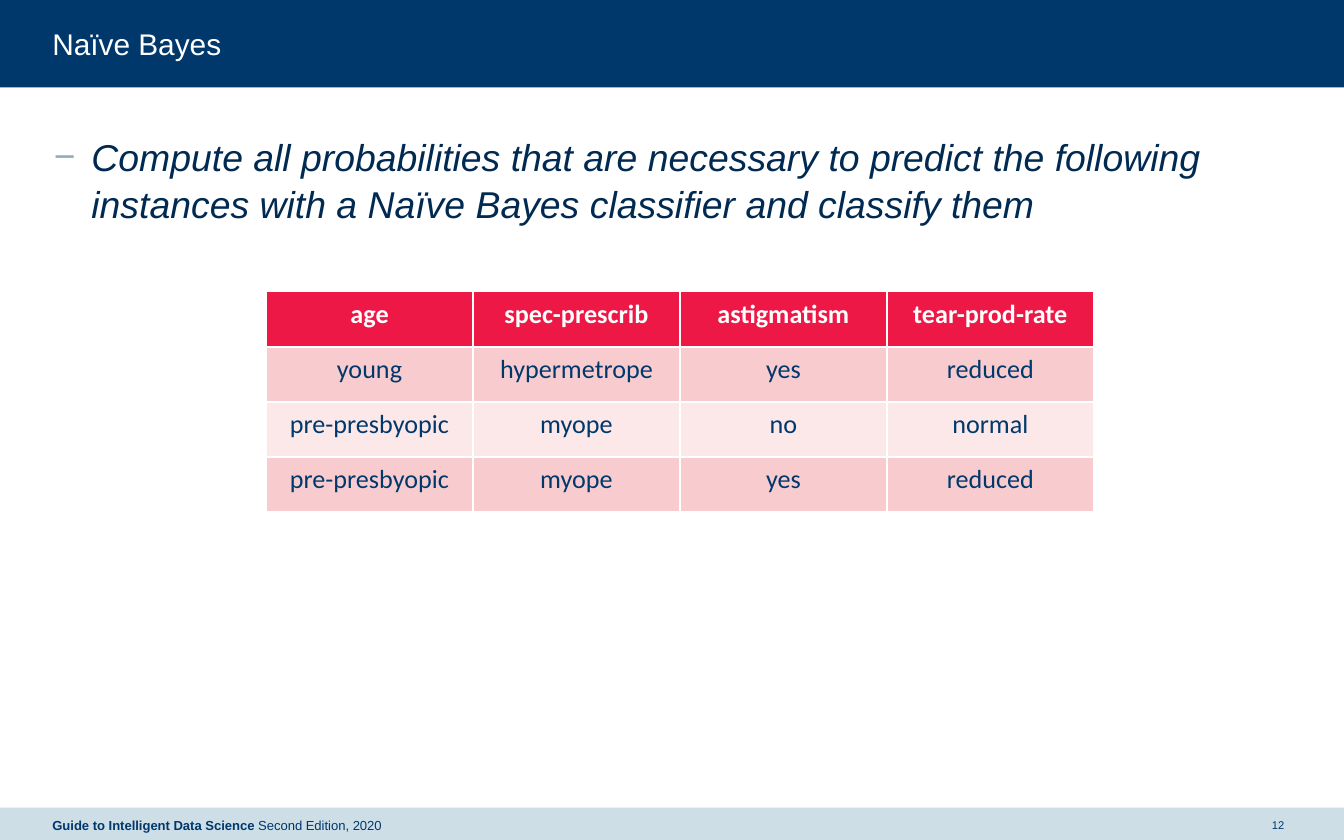
from lxml.etree import SubElement
from pptx import Presentation
from pptx.dml.color import RGBColor
from pptx.enum.shapes import MSO_SHAPE
from pptx.enum.text import MSO_ANCHOR, PP_ALIGN
from pptx.oxml.ns import qn
from pptx.util import Inches, Pt

NAVY = RGBColor(0x00, 0x38, 0x6C)
DARK = RGBColor(0x00, 0x2A, 0x51)
PALE_BLUE = RGBColor(0xCD, 0xDE, 0xE7)
WHITE = RGBColor(0xFF, 0xFF, 0xFF)
RED = RGBColor(0xED, 0x18, 0x46)
PINK = RGBColor(0xF8, 0xCC, 0xCF)
LIGHT_PINK = RGBColor(0xFC, 0xE8, 0xE9)
BULLET_COLOR = "92AEBC"

TITLE = "Naïve Bayes"
TASK = ("Compute all probabilities that are necessary to predict the following "
        "instances with a Naïve Bayes classifier and classify them")
BOOK, EDITION = "Guide to Intelligent Data Science ", "Second Edition, 2020"
PAGE = "12"
INSTANCES = [
    ("age", "spec-prescrib", "astigmatism", "tear-prod-rate"),
    ("young", "hypermetrope", "yes", "reduced"),
    ("pre-presbyopic", "myope", "no", "normal"),
    ("pre-presbyopic", "myope", "yes", "reduced"),
]
BANDS = [(0, 0.65, NAVY), (6.01, 0.26, PALE_BLUE)]
COL_W, ROW_H = 1.54, 0.41


def add_text(p, text, size, color, font="Arial", bold=False, italic=False,
             align=PP_ALIGN.LEFT):
    p.alignment = align
    r = p.add_run()
    r.text = text
    f = r.font
    f.name, f.size, f.bold, f.italic = font, Pt(size), bold, italic
    f.color.rgb = color


def place(sp, x, y, w, h, anchor=MSO_ANCHOR.TOP):
    """Move a text shape, drop its insets and return its first paragraph."""
    sp.left, sp.top, sp.width, sp.height = map(Inches, (x, y, w, h))
    tf = sp.text_frame
    tf.word_wrap = True
    tf.vertical_anchor = anchor
    tf.margin_left = tf.margin_right = tf.margin_top = tf.margin_bottom = 0
    return tf.paragraphs[0]


def add_dash_bullet(p):
    pPr = p._p.get_or_add_pPr()
    pPr.set("marL", str(Inches(0.29)))
    pPr.set("indent", str(Inches(-0.28)))
    color = SubElement(pPr, qn("a:buClr"))
    SubElement(color, qn("a:srgbClr"), val=BULLET_COLOR)
    SubElement(pPr, qn("a:buFont"), typeface="Arial")
    SubElement(pPr, qn("a:buChar"), char="−")


prs = Presentation()
prs.slide_width, prs.slide_height = Inches(10), Inches(6.25)
s = prs.slides.add_slide(prs.slide_layouts[1])
title, body = s.placeholders

for y, h, color in BANDS:
    band = s.shapes.add_shape(MSO_SHAPE.RECTANGLE, 0, Inches(y),
                              prs.slide_width, Inches(h))
    band.shadow.inherit = False
    band.fill.solid()
    band.fill.fore_color.rgb = color
    band.line.fill.background()
    title.element.addprevious(band.element)  # behind the text

add_text(place(title, 0.39, 0.19, 9.22, 0.27), TITLE, 16, WHITE)

p = place(body, 0.39, 0.98, 9.16, 4.71)
p.space_before = Pt(7.5)
p.line_spacing = 1.05
add_dash_bullet(p)
add_text(p, TASK, 20, DARK, italic=True)

page = s.shapes.add_textbox(0, 0, 0, 0)
add_text(place(page, 9.41, 6.01, 0.2, 0.26, MSO_ANCHOR.MIDDLE), PAGE, 6, NAVY,
         align=PP_ALIGN.CENTER)

footer = s.shapes.add_textbox(0, 0, 0, 0)
p = place(footer, 0.39, 6.01, 4.39, 0.26, MSO_ANCHOR.MIDDLE)
add_text(p, BOOK, 7, NAVY, bold=True)
add_text(p, EDITION, 7, NAVY)

n_rows, n_cols = len(INSTANCES), len(INSTANCES[0])
table = s.shapes.add_table(n_rows, n_cols, Inches(1.98), Inches(2.17),
                           Inches(COL_W * n_cols), Inches(ROW_H * n_rows)).table
for i, row in enumerate(INSTANCES):
    header = i == 0
    fill = RED if header else PINK if i % 2 else LIGHT_PINK
    for j, text in enumerate(row):
        cell = table.cell(i, j)
        cell.fill.solid()
        cell.fill.fore_color.rgb = fill
        add_text(cell.text_frame.paragraphs[0], text, 14,
                 WHITE if header else NAVY, font="Calibri", bold=header,
                 align=PP_ALIGN.CENTER)

prs.save("out.pptx")
